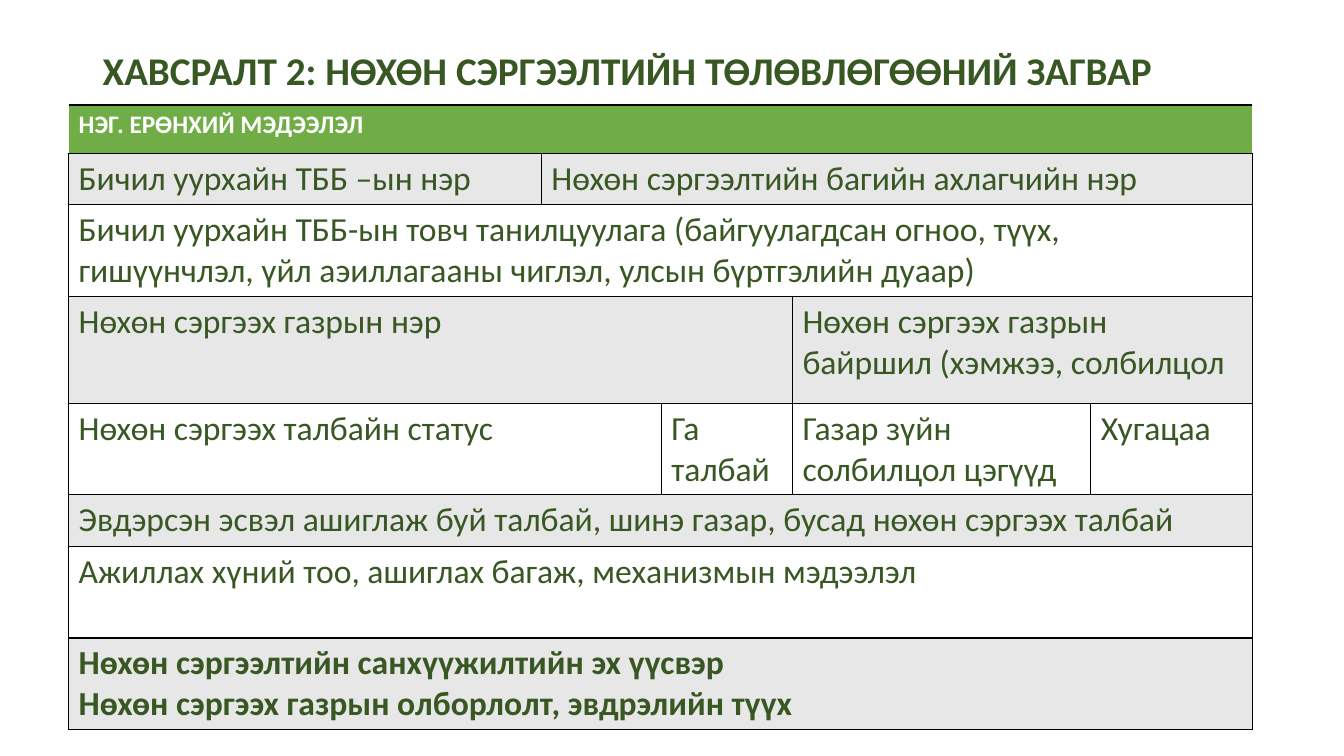
from lxml import etree
from pptx import Presentation
from pptx.dml.color import RGBColor
from pptx.enum.text import MSO_ANCHOR
from pptx.oxml.ns import qn
from pptx.util import Inches, Pt

MIDDLE = MSO_ANCHOR.MIDDLE
COLORS = {
    "heading": "385723",
    "band": "70AD47",
    "shade": "E7E7E7",
    "white": "FFFFFF",
    "border": "000000",
}
COLUMN_WIDTHS = [4.69, 1.19, 1.3, 2.96, 1.6]
ROW_HEIGHTS = [0.48, 0.51, 0.91, 1.06, 0.91, 0.51, 0.91, 0.91]
FORM_ROWS = [
    [(5, ["НЭГ. ЕРӨНХИЙ МЭДЭЭЛЭЛ"])],
    [(1, ["Бичил уурхайн ТББ –ын нэр"]),
     (4, ["Нөхөн сэргээлтийн багийн ахлагчийн нэр"])],
    [(5, ["Бичил уурхайн ТББ-ын товч танилцуулага (байгуулагдсан огноо, түүх, "
          "гишүүнчлэл, үйл аэиллагааны чиглэл, улсын бүртгэлийн дуаар)"])],
    [(3, ["Нөхөн сэргээх газрын нэр"]),
     (2, ["Нөхөн сэргээх газрын байршил (хэмжээ, солбилцол"])],
    [(2, ["Нөхөн сэргээх талбайн статус"]), (1, ["Га талбай"]),
     (1, ["Газар зүйн солбилцол цэгүүд"]), (1, ["Хугацаа"])],
    [(5, ["Эвдэрсэн эсвэл ашиглаж буй талбай, шинэ газар, бусад нөхөн сэргээх талбай"])],
    [(5, ["Ажиллах хүний тоо, ашиглах багаж, механизмын мэдээлэл"])],
    [(5, ["Нөхөн сэргээлтийн санхүүжилтийн эх үүсвэр",
          "Нөхөн сэргээх газрын олборлолт, эвдрэлийн түүх"])],
]


class FormSlide:
    font = "Calibri"

    def __init__(self, slide):
        self.slide = slide

    def add_lines(self, frame, lines, size, color, bold):
        for index, line in enumerate(lines):
            paragraph = frame.paragraphs[0] if index == 0 else frame.add_paragraph()
            run = paragraph.add_run()
            run.text = line
            run.font.name = self.font
            run.font.size = Pt(size)
            run.font.bold = bold
            run.font.color.rgb = RGBColor.from_string(COLORS[color])

    def title(self, text, left, top, width, height):
        box = self.slide.shapes.add_textbox(
            Inches(left), Inches(top), Inches(width), Inches(height))
        frame = box.text_frame
        frame.word_wrap = True
        frame.vertical_anchor = MIDDLE
        self.add_lines(frame, [text], 28, "heading", True)
        frame.paragraphs[0].line_spacing = 0.9

    def borders(self, cell, widths):
        properties = cell._tc.get_or_add_tcPr()
        for side, width in widths.items():
            line = etree.SubElement(properties, qn(f"a:ln{side}"), w=str(Pt(width)))
            if width:
                fill = etree.SubElement(line, qn("a:solidFill"))
                etree.SubElement(fill, qn("a:srgbClr"), val=COLORS["border"])
            else:
                etree.SubElement(line, qn("a:noFill"))

    def form(self, rows, left, top, widths, heights):
        table = self.slide.shapes.add_table(
            len(rows), len(widths), Inches(left), Inches(top),
            Inches(sum(widths)), Inches(sum(heights))).table
        for column, width in zip(table.columns, widths):
            column.width = Inches(width)
        for row, height in zip(table.rows, heights):
            row.height = Inches(height)

        for row_index, entries in enumerate(rows):
            header = row_index == 0
            closing = row_index == len(rows) - 1
            fill = "band" if header else "shade" if row_index % 2 else "white"
            if header:
                edges = {"L": 0, "R": 0, "T": 2, "B": 1}
            else:
                edges = dict.fromkeys("LRTB", 1)
            for cell in table.rows[row_index].cells:
                self.borders(cell, edges)
                cell.fill.solid()
                cell.fill.fore_color.rgb = RGBColor.from_string(COLORS[fill])

            start = 0
            for span, lines in entries:
                cell = table.cell(row_index, start)
                if span > 1:
                    cell.merge(table.cell(row_index, start + span - 1))
                self.add_lines(cell.text_frame, lines, 18 if header else 24,
                               "white" if header else "heading", header or closing)
                start += span


def main():
    presentation = Presentation()
    presentation.slide_width = Inches(13.33)
    presentation.slide_height = Inches(7.5)
    page = FormSlide(presentation.slides.add_slide(presentation.slide_layouts[6]))
    page.title("ХАВСРАЛТ 2: НӨХӨН СЭРГЭЭЛТИЙН ТӨЛӨВЛӨГӨӨНИЙ ЗАГВАР",
               0.92, 0.4, 10.98, 0.64)
    page.form(FORM_ROWS, 0.68, 1.04, COLUMN_WIDTHS, ROW_HEIGHTS)
    presentation.save("out.pptx")


if __name__ == "__main__":
    main()
